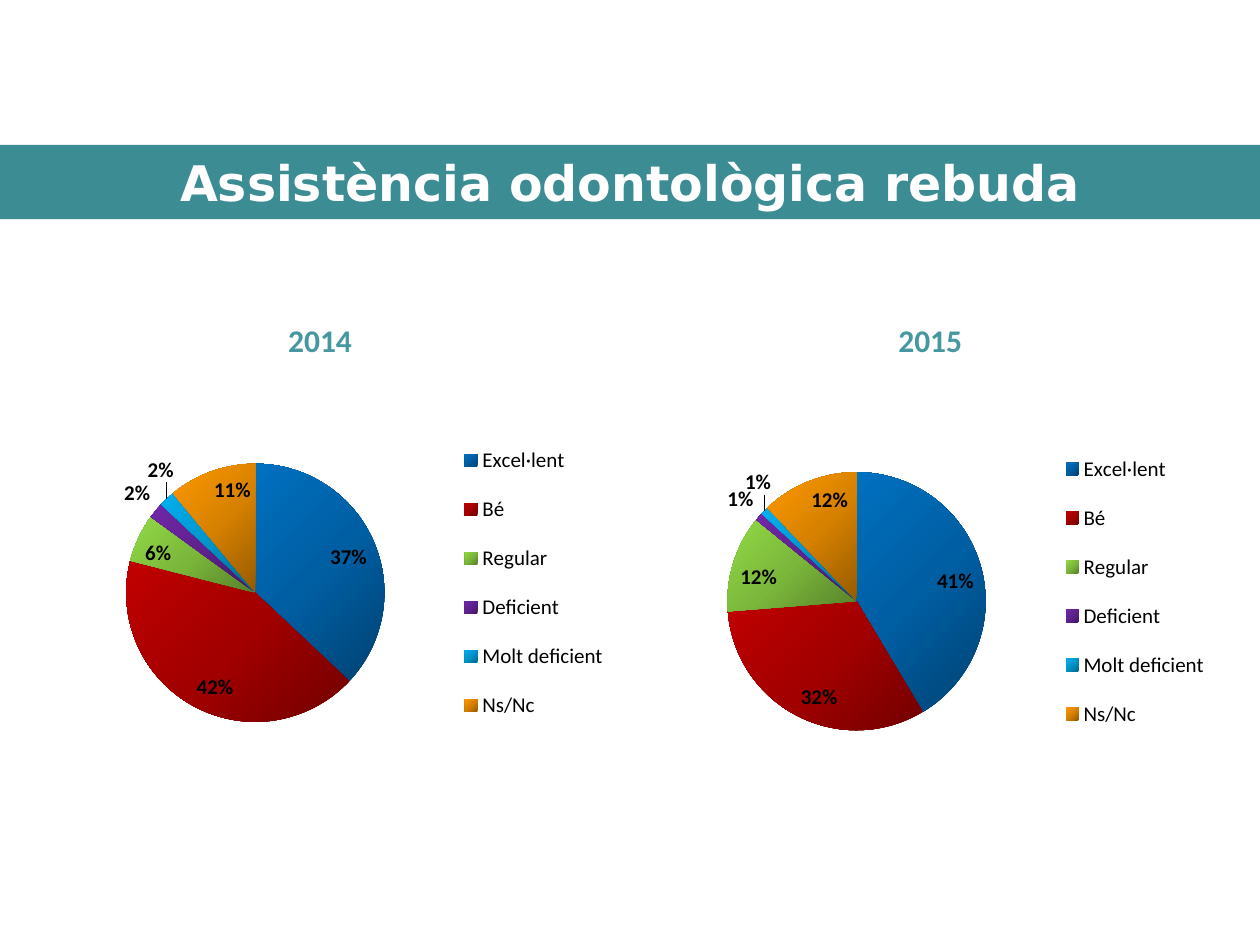
from copy import deepcopy

from lxml import etree
from pptx import Presentation
from pptx import util as u
from pptx.chart.data import CategoryChartData
from pptx.dml.color import RGBColor
from pptx.enum import chart as ch, text
from pptx.oxml import ns

CATEGORIES = ["Excel·lent", "Bé", "Regular", "Deficient", "Molt deficient", "Ns/Nc"]
GRADIENTS = [
    ("004272", "005EA2", "0070C0"),
    ("720000", "A20000", "C00000"),
    ("57812A", "7BB73B", "92DA46"),
    ("431764", "5F218E", "7128A8"),
    ("00688E", "0094CA", "00B0F0"),
    ("975B00", "D78100", "FF9900"),
]
OUTSIDE_LABELS = {3: (0, 0), 4: (0.02, -0.02)}


def rgb(value):
    return RGBColor.from_string(value)


def style_font(font, name, size, color="000000", bold=False):
    font.name, font.size, font.bold = name, u.Pt(size), bold
    font.color.rgb = rgb(color)


def write(tf, content, align=None, **style):
    p = tf.paragraphs[0]
    p.alignment = align
    r = p.add_run()
    r.text = content
    style_font(r.font, **style)


def set_layout(parent, index, **values):
    for old in parent.findall(ns.qn("c:layout")):
        parent.remove(old)
    layout = etree.Element(ns.qn("c:layout"))
    manual = etree.SubElement(layout, ns.qn("c:manualLayout"))
    for tag, value in values.items():
        etree.SubElement(manual, ns.qn(f"c:{tag}")).set("val", str(value))
    parent.insert(index, layout)


class Deck:
    face = "Calibri"
    accent = "4597A0"
    band = "3C8C93"

    def __init__(self):
        self.prs = Presentation()
        self.prs.slide_width, self.prs.slide_height = u.Cm(25.4), u.Cm(19.05)
        self.s = self.prs.slides.add_slide(self.prs.slide_layouts[5])

    def title(self, content, *box):
        sp = self.s.shapes.title
        sp.left, sp.top, sp.width, sp.height = map(u.Cm, box)
        sp.fill.solid()
        sp.fill.fore_color.rgb = rgb(self.band)
        tf = sp.text_frame
        tf.auto_size = text.MSO_AUTO_SIZE.NONE
        tf.vertical_anchor = text.MSO_ANCHOR.MIDDLE
        write(tf, content, align=text.PP_ALIGN.CENTER, name="DejaVu Sans",
              size=28, color="FFFFFF", bold=True)

    def label(self, content, *box):
        tf = self.s.shapes.add_textbox(*map(u.Cm, box)).text_frame
        tf.word_wrap = True
        tf.auto_size = text.MSO_AUTO_SIZE.SHAPE_TO_FIT_TEXT
        write(tf, content, name=self.face, size=18, color=self.accent, bold=True)

    def pie(self, values, *box):
        data = CategoryChartData()
        data.categories = CATEGORIES
        data.add_series("Series 1", values)
        chart = self.s.shapes.add_chart(
            ch.XL_CHART_TYPE.PIE, *map(u.Cm, box), data).chart
        style_font(chart.font, "Arial", 18)
        chart.has_title = False
        root = chart._chartSpace
        set_layout(root.xpath(".//c:plotArea")[0], 0, layoutTarget="inner",
                   xMode="edge", yMode="edge", x=0.165, y=0.111, w=0.437, h=0.765)

        chart.has_legend = True
        chart.legend.position = ch.XL_LEGEND_POSITION.RIGHT
        chart.legend.include_in_layout = False
        style_font(chart.legend.font, self.face, 12)
        set_layout(root.xpath(".//c:legend")[0], 1, xMode="edge", yMode="edge",
                   x=0.72, y=0.17, w=0.27, h=0.61)

        plot = chart.plots[0]
        plot.vary_by_categories = True
        series = plot.series[0]
        for i, colors in enumerate(GRADIENTS):
            self.shade(root, series.points[i].format.fill, colors)

        labels = series.data_labels
        labels.show_percentage, labels.show_value = True, False
        labels.position = ch.XL_LABEL_POSITION.INSIDE_END
        style_font(labels.font, self.face, 12, bold=True)
        for i, offset in OUTSIDE_LABELS.items():
            self.move_label(root, series.points[i].data_label, i, offset)

    def shade(self, root, fill, colors):
        fill.gradient()
        fill.gradient_angle = 135
        stops = root.xpath(".//a:gsLst")[-1]
        stops.append(deepcopy(stops[0]))
        for stop, color, position in zip(fill.gradient_stops, colors, (0, 0.5, 1)):
            stop.color.rgb = rgb(color)
            stop.position = position

    def move_label(self, root, label, index, offset):
        style_font(label.font, self.face, 12, bold=True)
        label.position = ch.XL_LABEL_POSITION.OUTSIDE_END
        node = root.xpath(f".//c:dLbl[c:idx/@val='{index}']")[0]
        node.find(ns.qn("c:showVal")).set("val", "0")
        node.find(ns.qn("c:showPercent")).set("val", "1")
        if any(offset):
            set_layout(node, 1, x=offset[0], y=offset[1])


def main():
    deck = Deck()
    deck.title("Assistència odontològica rebuda", 0, 2.92, 25.4, 1.5)
    deck.pie((37, 42, 6, 2, 2, 11), 0.58, 6.76, 11.91, 10.52)
    deck.pie((41, 32, 12, 1, 1, 12), 12.7, 6.93, 11.91, 10.52)
    deck.label("2014", 5.56, 6.35, 2.18, 1.02)
    deck.label("2015", 17.86, 6.35, 1.98, 1.02)
    deck.prs.save("out.pptx")


if __name__ == "__main__":
    main()
